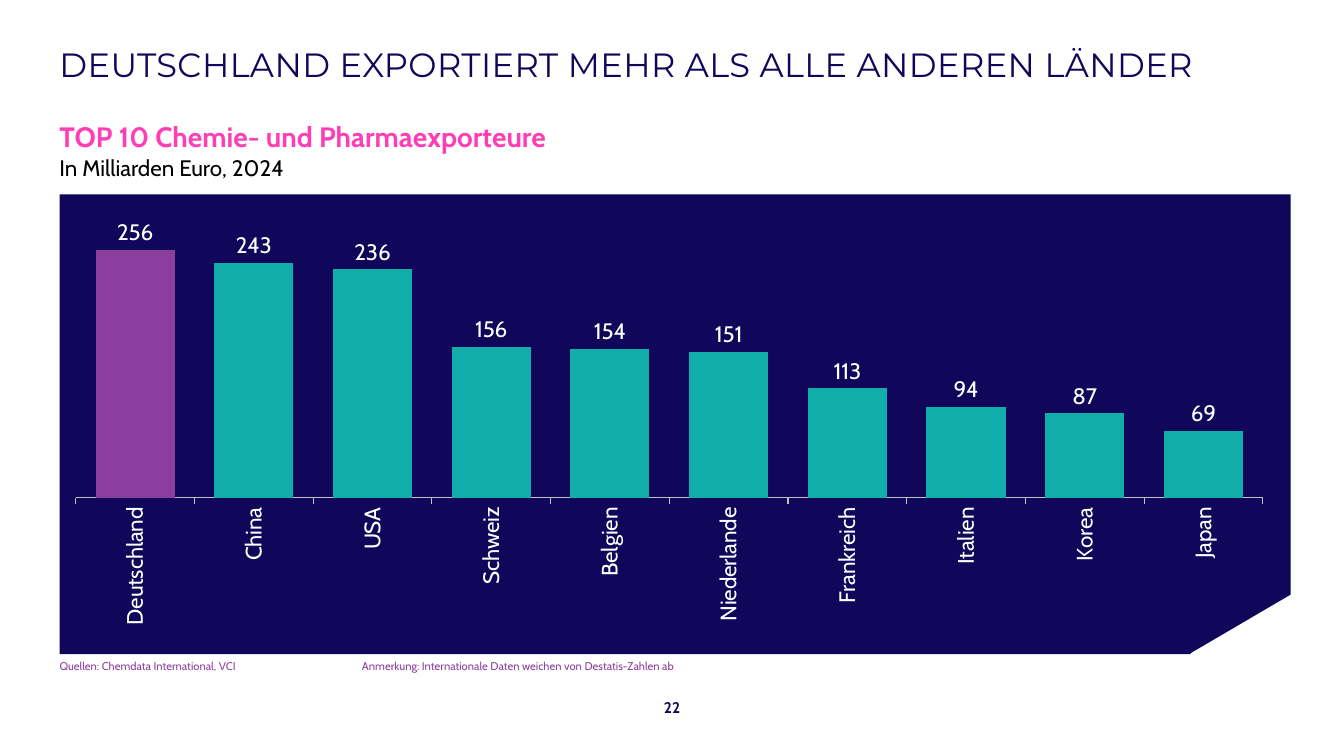
import pptx
import pptx.chart.data
import pptx.dml.color
import pptx.enum.chart
import pptx.enum.text
import pptx.oxml
import pptx.oxml.ns
import pptx.util
from pptx.util import Inches

COLORS = {
    "navy": "10065A",
    "pink": "FF3EB5",
    "purple": "8C3E9F",
    "teal": "10ADAA",
    "grey": "C0C0C0",
    "black": "000000",
    "white": "FFFFFF",
}
LEFT = 0.59
EXPORTS = {
    "Deutschland": 256, "China": 243, "USA": 236, "Schweiz": 156,
    "Belgien": 154, "Niederlande": 151, "Frankreich": 113,
    "Italien": 94, "Korea": 87, "Japan": 69,
}


def rgb(name):
    return pptx.dml.color.RGBColor.from_string(COLORS[name])


def fill_solid(target, color):
    target.fill.solid()
    target.fill.fore_color.rgb = rgb(color)


def set_font(font, size, color, name="Cabin", bold=False):
    font.name = name
    font.size = pptx.util.Pt(size)
    font.bold = bold
    font.color.rgb = rgb(color)


def add_text(slide, text, left, top, width, height, size, color, font="Cabin",
             bold=False, centered=False, middle=False, tab=None, spacing=None):
    box = slide.shapes.add_textbox(Inches(left), Inches(top), Inches(width), Inches(height))
    frame = box.text_frame
    frame.word_wrap = True
    frame.margin_left = frame.margin_right = frame.margin_top = frame.margin_bottom = 0
    if middle:
        frame.vertical_anchor = pptx.enum.text.MSO_ANCHOR.MIDDLE
    paragraph = frame.paragraphs[0]
    paragraph.text = text
    if centered:
        paragraph.alignment = pptx.enum.text.PP_ALIGN.CENTER
    if tab:
        properties = paragraph._p.get_or_add_pPr()
        properties.append(pptx.oxml.parse_xml(
            f'<a:tabLst {pptx.oxml.ns.nsdecls("a")}>'
            f'<a:tab pos="{Inches(tab)}" algn="l"/></a:tabLst>'))
    set_font(paragraph.font, size, color, font, bold)
    if spacing:
        paragraph.runs[0]._r.get_or_add_rPr().set("spc", str(spacing))


def add_panel(slide):
    """Dark panel with its lower right corner cut off."""
    right, top, bottom = 12.8, 1.93, 6.49
    points = [(right, top), (right, 5.9), (11.81, 6.48), (11.81, bottom), (LEFT, bottom)]
    builder = slide.shapes.build_freeform(Inches(LEFT), Inches(top))
    builder.add_line_segments([(Inches(x), Inches(y)) for x, y in points], close=True)
    panel = builder.convert_to_shape()
    panel.shadow.inherit = False
    fill_solid(panel, "navy")
    panel.line.fill.background()


def set_plot_layout(chart, x, y, width, height):
    plot_area = chart._chartSpace.chart.plotArea
    for layout in plot_area.findall(pptx.oxml.ns.qn("c:layout")):
        plot_area.remove(layout)
    sizes = {"x": x, "y": y, "w": width, "h": height}
    values = "".join(f'<c:{key} val="{value}"/>' for key, value in sizes.items())
    plot_area.insert(0, pptx.oxml.parse_xml(
        f'<c:layout {pptx.oxml.ns.nsdecls("c")}><c:manualLayout>'
        '<c:layoutTarget val="inner"/><c:xMode val="edge"/><c:yMode val="edge"/>'
        f'{values}</c:manualLayout></c:layout>'))


def add_export_chart(slide):
    data = pptx.chart.data.CategoryChartData()
    data.categories = list(EXPORTS)
    data.add_series("Exporte", list(EXPORTS.values()))
    chart = slide.shapes.add_chart(
        pptx.enum.chart.XL_CHART_TYPE.COLUMN_CLUSTERED,
        Inches(0.68), Inches(2.05), Inches(11.85), Inches(4.29), data).chart
    chart.has_legend = False
    chart.has_title = False
    set_font(chart.font, 16, "white")
    set_plot_layout(chart, 0.006, 0.002, 0.994, 0.671)

    # Axes
    value_axis = chart.value_axis
    value_axis.minimum_scale = 0
    value_axis.maximum_scale = 300
    value_axis.has_major_gridlines = False
    value_axis.visible = False
    category_axis = chart.category_axis
    category_axis.major_tick_mark = pptx.enum.chart.XL_TICK_MARK.OUTSIDE
    category_axis.format.line.color.rgb = rgb("grey")
    category_axis.format.line.width = pptx.util.Pt(0.75)
    set_font(category_axis.tick_labels.font, 16, "white")
    body = category_axis._element.find(".//" + pptx.oxml.ns.qn("a:bodyPr"))
    body.set("rot", "-5400000")
    body.set("vert", "horz")

    # Columns and their values
    plot = chart.plots[0]
    plot.gap_width = 50
    plot.vary_by_categories = False
    series = plot.series[0]
    fill_solid(series.format, "teal")
    fill_solid(series.points[0].format, "purple")
    labels = series.data_labels
    labels.show_value = True
    labels.position = pptx.enum.chart.XL_LABEL_POSITION.OUTSIDE_END
    labels.number_format = "#,##0"
    labels.number_format_is_linked = False
    set_font(labels.font, 16, "white")


def main():
    presentation = pptx.Presentation()
    presentation.slide_width = Inches(13.33)
    presentation.slide_height = Inches(7.5)
    slide = presentation.slides.add_slide(presentation.slide_layouts[6])

    # Headings
    add_text(slide, "DEUTSCHLAND EXPORTIERT MEHR ALS ALLE ANDEREN LÄNDER",
             LEFT, 0.15, 12.2, 0.98, 24, "navy", font="Montserrat", middle=True, spacing=30)
    add_text(slide, "TOP 10 Chemie- und Pharmaexporteure",
             LEFT, 1.19, 12.2, 0.31, 20, "pink", bold=True)
    add_text(slide, "In Milliarden Euro, 2024", LEFT, 1.53, 12.2, 0.28, 16, "black")

    # Chart on its panel
    add_panel(slide)
    add_export_chart(slide)

    # Sources and page number
    add_text(slide, "Quellen: Chemdata International, VCI\t"
             "Anmerkung: Internationale Daten weichen von Destatis-Zahlen ab",
             LEFT, 6.54, 11.02, 0.13, 8, "purple", tab=3)
    add_text(slide, "22", 6.37, 6.88, 0.59, 0.28, 11, "navy",
             bold=True, centered=True, middle=True)
    presentation.save("out.pptx")


if __name__ == "__main__":
    main()
